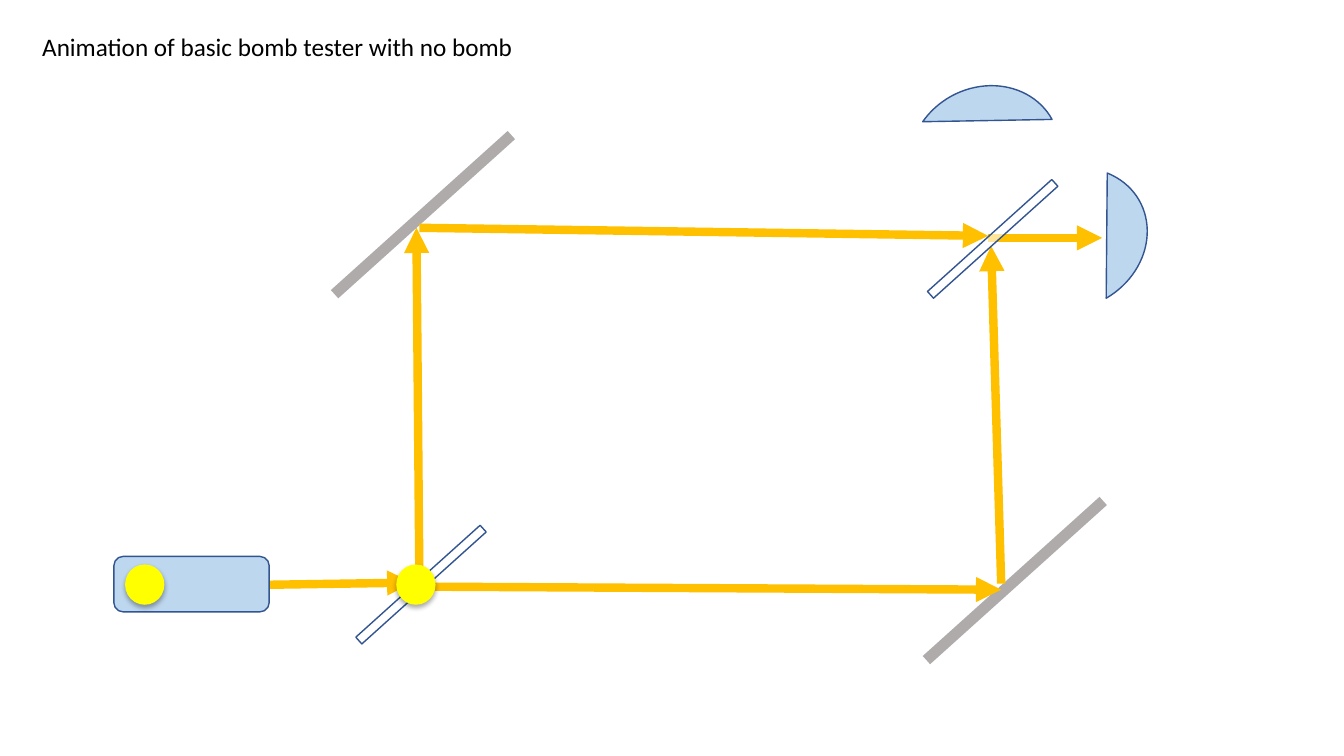
from lxml.etree import SubElement
from pptx import Presentation
from pptx.dml.color import RGBColor
from pptx.enum.shapes import MSO_CONNECTOR, MSO_SHAPE
from pptx.enum.text import MSO_AUTO_SIZE
from pptx.oxml.ns import qn
from pptx.util import Inches, Pt

BEAM = RGBColor(0xFF, 0xC0, 0x00)
GRAY = RGBColor(0xAF, 0xAB, 0xAB)
PALE = RGBColor(0xBD, 0xD7, 0xEE)
NAVY = RGBColor(0x32, 0x54, 0x91)
WHITE = RGBColor(0xFF, 0xFF, 0xFF)
YELLOW = RGBColor(0xFF, 0xFF, 0x00)
BLACK = RGBColor(0, 0, 0)


def apply(obj, values):
    for name, value in values.items():
        setattr(obj, name, value)


def add_node(parent, tag, **values):
    return SubElement(parent, qn(tag), {k: str(v) for k, v in values.items()})


def add_part(slide, kind, box, fill, edge=None, angle=0):
    part = slide.shapes.add_shape(kind, *map(Inches, box))
    part.rotation = angle
    part.shadow.inherit = False
    part.fill.solid()
    part.fill.fore_color.rgb = fill
    if edge is None:
        part.line.fill.background()
    else:
        part.line.color.rgb = edge
        part.line.width = Pt(1)
    return part


def add_beam(slide, start, end):
    beam = slide.shapes.add_connector(
        MSO_CONNECTOR.STRAIGHT, *map(Inches, start + end))
    beam.line.color.rgb = BEAM
    beam.line.width = Pt(6)
    add_node(beam.line._get_or_add_ln(), "a:tailEnd", type="triangle")
    add_node(beam._element.spPr, "a:effectLst")


def add_mirror(slide, left, top):
    add_part(slide, MSO_SHAPE.RECTANGLE, (left, top, 0.11, 2.36), GRAY, angle=48)


def add_splitter(slide, left, top):
    glass = add_part(slide, MSO_SHAPE.RECTANGLE, (left, top, 0.09, 1.66),
                     WHITE, NAVY, 48)
    color = glass._element.spPr.find(qn("a:solidFill"))[0]
    add_node(color, "a:alpha", val=60000)


def add_sensor(slide, box, angle):
    sensor = add_part(slide, MSO_SHAPE.CHORD, box, PALE, NAVY, angle)
    for i, value in enumerate((89.03, 162)):
        sensor.adjustments[i] = value


def add_photon(slide, left):
    photon = add_part(slide, MSO_SHAPE.OVAL, (left, 5.6, 0.39, 0.4), YELLOW)
    effects = photon._element.spPr.find(qn("a:effectLst"))
    shadow = add_node(effects, "a:outerShdw", blurRad=Pt(3.5), dist=Pt(2.2),
                      dir=90 * 60000, rotWithShape=0)
    color = add_node(shadow, "a:srgbClr", val=BLACK)
    add_node(color, "a:alpha", val=32000)


def add_title(slide, text):
    box = slide.shapes.add_textbox(*map(Inches, (0.32, 0.26, 7.95, 0.4)))
    apply(box.text_frame, {"word_wrap": True,
                           "auto_size": MSO_AUTO_SIZE.SHAPE_TO_FIT_TEXT})
    run = box.text_frame.paragraphs[0].add_run()
    run.text = text
    apply(run.font, {"name": "Calibri", "size": Pt(18)})
    run.font.color.rgb = BLACK


def main():
    deck = Presentation()
    apply(deck, {"slide_width": Inches(13.33), "slide_height": Inches(7.5)})
    slide = deck.slides.add_slide(deck.slide_layouts[6])

    add_beam(slide, (4.16, 5.79), (4.13, 2.26))
    for left, top in ((4.14, 0.95), (10.01, 4.58)):
        add_mirror(slide, left, top)
    for start, end in (
        ((4.16, 2.26), (9.8, 2.34)),
        ((9.93, 5.79), (9.83, 2.44)),
        ((1.44, 5.82), (4.09, 5.78)),
        ((9.8, 2.36), (10.93, 2.36)),
    ):
        add_beam(slide, start, end)

    add_sensor(slide, (9.08, 0.79, 1.37, 1.53), 61.1)
    add_sensor(slide, (9.86, 1.69, 1.54, 1.36), 149.9)
    add_splitter(slide, 4.13, 4.97)
    add_part(slide, MSO_SHAPE.FLOWCHART_ALTERNATE_PROCESS,
             (1.13, 5.52, 1.54, 0.55), PALE, NAVY)
    add_splitter(slide, 9.8, 1.54)
    add_photon(slide, 1.24)
    add_beam(slide, (4.16, 5.82), (9.93, 5.85))
    add_title(slide, "Animation of basic bomb tester with no bomb")
    add_photon(slide, 3.93)

    deck.save("out.pptx")


if __name__ == "__main__":
    main()
